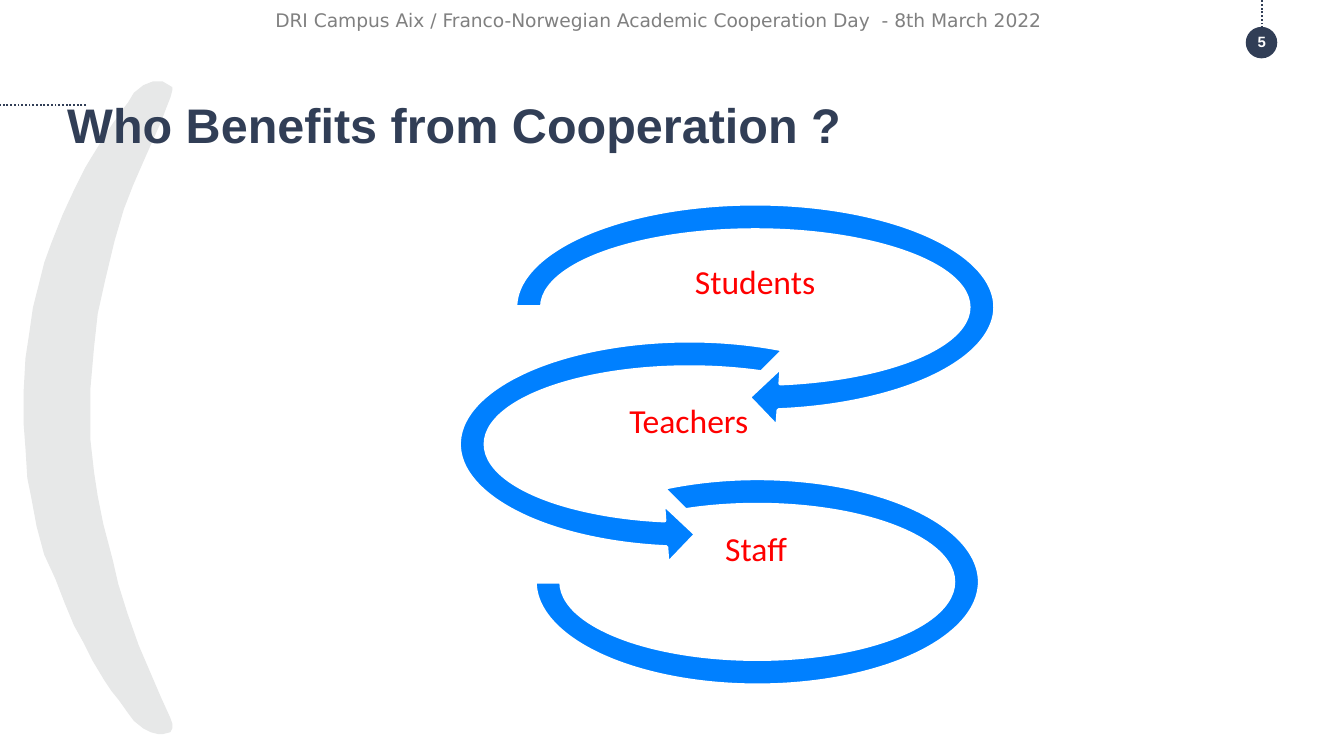
"""Build the slide on who benefits from cooperation."""
from lxml import etree
from pptx import Presentation
from pptx.dml.color import RGBColor
from pptx.enum import dml, shapes, text
from pptx.oxml import ns
from pptx.util import Pt

NAVY = RGBColor(0x31, 0x3E, 0x56)
BLUE = RGBColor(0x00, 0x80, 0xFF)
RED = RGBColor(0xFF, 0x00, 0x00)
GREY = RGBColor(0x80, 0x80, 0x80)
PALE = RGBColor(0xE7, 0xE8, 0xE8)
WHITE = RGBColor(0xFF, 0xFF, 0xFF)
FORM = shapes.MSO_SHAPE
CENTER, LEFT = text.PP_ALIGN.CENTER, text.PP_ALIGN.LEFT

TITLE = ("Who Benefits from Cooperation ?", (36, 47.5, 648, 38), LEFT,
         {"name": "Arial", "size": Pt(26), "bold": True}, NAVY)
LABEL_FONT = {"name": "Calibri", "size": Pt(18)}
LABEL_SIZE = (71.28, 36)
LABELS = [("Students", 404.5, 150.5), ("Teachers", 369, 225), ("Staff", 405, 293.5)]
CAPTIONS = [
    ("DRI Campus Aix / Franco-Norwegian Academic Cooperation Day  - 8th March 2022",
     (140.4, 0, 518, 21.5), LEFT, {"name": "DejaVu Sans", "size": Pt(10)}, GREY),
    ("5", (658, 18, 36, 8.64), CENTER,
     {"name": "Arial", "size": Pt(8), "bold": True}, WHITE),
]
LOOPS = [
    (FORM.CIRCULAR_ARROW, (267.12, 100.08, 275.04, 128.88), (0.11, 11.42, 45, 108, 0.125)),
    (FORM.LEFT_CIRCULAR_ARROW, (236.88, 173.52, 264.96, 128.88), (0.11, 11.42, 63, 189, 0.125)),
    (FORM.BLOCK_ARC, (286.56, 256.32, 238.32, 110.88), (135, 108, 0.127)),
]
BADGE = (667.4, 14.4, 16.9, 16.9)
DOTTED_LINES = [(676.08, 15.1, 676.08, 0), (46.1, 56.16, 0, 56.16)]
BRACKET_OUTER = [
    (92, 47.5), (91.5, 46.8), (87, 44), (82, 44), (77, 46), (72.5, 50.5), (69, 54.7),
    (65.5, 59), (61, 65.5), (57, 72), (49, 85), (46, 90), (40.3, 101.5), (33.8, 115),
    (28, 129.6), (24.5, 141), (21, 152.6), (18, 165), (15.8, 179), (13.7, 192),
    (13, 210), (13, 227), (13.7, 240.5), (15, 255.6), (16.6, 265.7), (20, 282),
    (24.5, 296.6), (29.5, 310), (35, 323), (40.3, 334.8), (45.4, 344), (50.4, 354),
    (56, 364), (59.8, 369.5), (64, 375), (69, 382), (72, 386), (77, 390),
    (80.6, 392.4), (85, 393), (87, 393), (90.7, 391.7), (92, 389.5)]
BRACKET_INNER = [
    (92, 388), (91, 385), (86.5, 374.4), (80, 360), (74, 346), (68.4, 329),
    (63.4, 313), (59.8, 300), (54.7, 281), (51.8, 265.7), (49.7, 253.4), (48.2, 235),
    (48.2, 209), (49.7, 186.5), (51.8, 168), (56, 150), (61, 129), (66.2, 112),
    (70.6, 99), (77.8, 82.8), (85.7, 65), (89, 57), (91, 52.5)]


def assign(target, values):
    for name, value in values.items():
        setattr(target, name, value)


def paint(part, fill, line, width):
    part.shadow.inherit = False
    part.fill.solid()
    part.fill.fore_color.rgb = fill
    part.line.color.rgb = line
    part.line.width = Pt(width)


def write(part, wording, align, font, color):
    frame = part.text_frame
    assign(frame, {"word_wrap": True, "auto_size": text.MSO_AUTO_SIZE.NONE,
                   "vertical_anchor": text.MSO_ANCHOR.MIDDLE,
                   "margin_top": 0, "margin_bottom": 0})
    frame.text = wording
    paragraph = frame.paragraphs[0]
    paragraph.alignment = align
    assign(paragraph.runs[0].font, font)
    paragraph.runs[0].font.color.rgb = color


def main():
    deck = Presentation()
    assign(deck, {"slide_width": Pt(720), "slide_height": Pt(405)})
    slide = deck.slides.add_slide(deck.slide_layouts[5])
    canvas = slide.shapes

    outline = BRACKET_OUTER + BRACKET_INNER
    builder = canvas.build_freeform(*outline[0], scale=Pt(1))
    builder.add_line_segments(outline[1:], close=True)
    paint(builder.convert_to_shape(), PALE, PALE, 0.75)

    badge = canvas.add_shape(FORM.OVAL, *map(Pt, BADGE))
    paint(badge, NAVY, NAVY, 0.75)
    badge.line.fill.background()

    for ends in DOTTED_LINES:
        rule = canvas.add_connector(shapes.MSO_CONNECTOR.STRAIGHT, *map(Pt, ends))
        rule.line.color.rgb = NAVY
        assign(rule.line, {"width": Pt(1), "dash_style": dml.MSO_LINE.ROUND_DOT})
        etree.SubElement(rule.element.spPr, ns.qn("a:effectLst"))

    for form, place, adjustments in LOOPS:
        loop = canvas.add_shape(form, *map(Pt, place))
        paint(loop, BLUE, WHITE, 2)
        for index, value in enumerate(adjustments):
            loop.adjustments[index] = value

    width, height = LABEL_SIZE
    for wording, x, y in LABELS:
        place = (x - width / 2, y - height / 2, width, height)
        label = canvas.add_textbox(*map(Pt, place))
        assign(label.text_frame, {"margin_left": 0, "margin_right": 0})
        write(label, wording, CENTER, LABEL_FONT, RED)

    heading = canvas.title
    wording, place, *style = TITLE
    assign(heading, dict(zip(("left", "top", "width", "height"), map(Pt, place))))
    assign(heading.text_frame, {"margin_left": 0, "margin_right": 0})
    write(heading, wording, *style)
    heading.element.getparent().append(heading.element)

    for wording, place, *style in CAPTIONS:
        write(canvas.add_textbox(*map(Pt, place)), wording, *style)

    deck.save("out.pptx")


if __name__ == "__main__":
    main()
